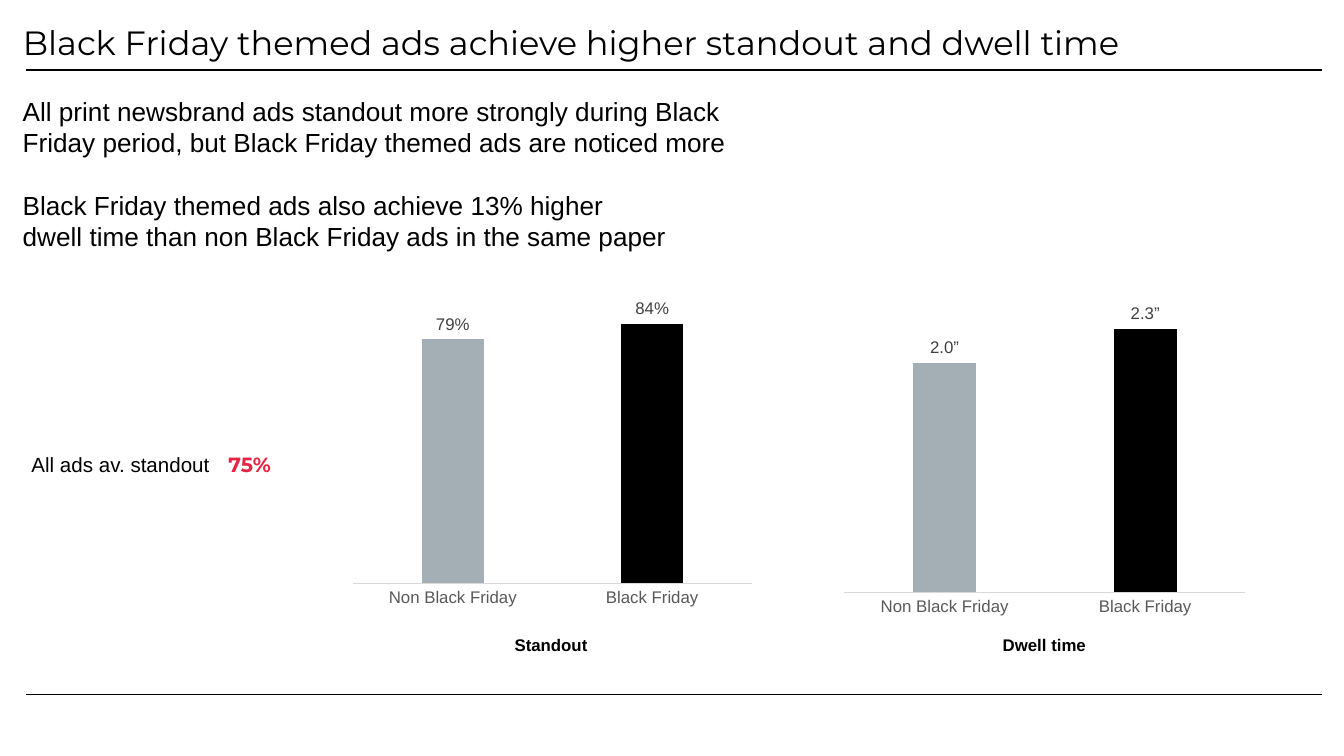
from pptx import Presentation
from pptx.chart.data import CategoryChartData
from pptx.dml.color import RGBColor
from pptx.enum.chart import XL_CHART_TYPE, XL_LABEL_POSITION, XL_TICK_MARK
from pptx.enum.shapes import MSO_CONNECTOR
from pptx.enum.text import MSO_ANCHOR, PP_ALIGN
from pptx.oxml import parse_xml
from pptx.oxml.ns import nsdecls
from pptx.util import Inches, Pt

HUES = {"black": "000000", "grey": "A3AEB5", "red": "E92343",
        "axis": "D9D9D9", "name": "595959", "label": "404040"}
TITLE = "Black Friday themed ads achieve higher standout and dwell time"
BODY = [
    "All print newsbrand ads standout more strongly during Black "
    "Friday period, but Black Friday themed ads are noticed more",
    "Black Friday themed ads also achieve 13% higher \v"
    "dwell time than non Black Friday ads in the same paper",
]
CATS = ["Non Black Friday", "Black Friday"]
CHARTS = [
    {"name": "Standout", "vals": [0.79, 0.84], "max": 1, "fmt": "0%", "tags": [],
     "box": (2.5, 1.94, 3.19, 2.61), "plot": (0.04, 0.04, 0.93, 0.88), "left": 3.37},
    {"name": "Dwell time", "vals": [2, 2.3], "max": 2.5, "fmt": "0.0",
     "tags": ["2.0”", "2.3”"],
     "box": (6.22, 2.23, 3.11, 2.42), "plot": (0.02, 0.02, 0.96, 0.88), "left": 7.04},
]
STATS = [
    ("All ads av. standout", 1.63, {"align": PP_ALIGN.RIGHT}),
    ("75%", 0.73, {"face": "Montserrat", "hue": "red", "bold": True}),
]
RULES = [0.52, 5.17]


def color(key):
    return RGBColor.from_string(HUES[key])


def style(font, size, hue="black", face="Arial", bold=False):
    font.size, font.name, font.bold = Pt(size), face, bold
    font.color.rgb = color(hue)


def write(frame, text, align=PP_ALIGN.LEFT, gap=0, line=None, **look):
    parts = [text] if isinstance(text, str) else text
    frame.word_wrap = True
    for i, part in enumerate(parts):
        para = frame.add_paragraph() if i else frame.paragraphs[0]
        para.text = part
        para.alignment = align
        para.space_before = Pt(gap if i else 0)
        if line:
            para.line_spacing = line
        for item in [para, *para.runs]:
            style(item.font, **look)


def inches(box):
    return [Inches(n) for n in box]


def add_text(slide, box, text, inset=None, **look):
    frame = slide.shapes.add_textbox(*inches(box)).text_frame
    if inset is not None:
        frame.margin_left = frame.margin_right = Inches(inset)
        frame.margin_top = frame.margin_bottom = Inches(inset)
    write(frame, text, **look)


def add_rule(slide, y):
    rule = slide.shapes.add_connector(
        MSO_CONNECTOR.STRAIGHT, *inches((0.19, y, 9.84, y)))
    rule.line.color.rgb = color("black")
    rule.line.width = Pt(0.75)
    rule._element.spPr.append(parse_xml(f"<a:effectLst {nsdecls('a')}/>"))


def add_bars(slide, item):
    data = CategoryChartData()
    data.categories = CATS
    data.add_series("Series 1", item["vals"])
    chart = slide.shapes.add_chart(
        XL_CHART_TYPE.COLUMN_CLUSTERED, *inches(item["box"]), data).chart
    chart.has_legend = chart.has_title = False
    style(chart.font, 10)

    cat, val = chart.category_axis, chart.value_axis
    cat.major_tick_mark = cat.minor_tick_mark = XL_TICK_MARK.NONE
    cat.format.line.color.rgb = color("axis")
    cat.format.line.width = Pt(0.75)
    style(cat.tick_labels.font, 9, "name")
    val.minimum_scale, val.maximum_scale = 0, item["max"]
    val.has_major_gridlines = val.visible = False

    plot = chart.plots[0]
    plot.gap_width, plot.overlap = 219, -27
    plot.vary_by_categories = False
    bars = plot.series[0]
    for i, hue in enumerate(("grey", "black")):
        fill = bars.points[i].format.fill
        fill.solid()
        fill.fore_color.rgb = color(hue)
    tags = bars.data_labels
    tags.show_value = True
    tags.position = XL_LABEL_POSITION.OUTSIDE_END
    tags.number_format, tags.number_format_is_linked = item["fmt"], False
    style(tags.font, 9, "label")
    for i, text in enumerate(item["tags"]):
        tag = bars.points[i].data_label
        write(tag.text_frame, text, align=PP_ALIGN.CENTER, size=9, hue="label")
        tag.position = XL_LABEL_POSITION.OUTSIDE_END

    area = chart._chartSpace.chart.plotArea
    for old in area.findall(area.tag.replace("plotArea", "layout")):
        area.remove(old)
    sizes = "".join(f'<c:{k} val="{v}"/>' for k, v in zip("xywh", item["plot"]))
    area.insert(0, parse_xml(
        f'<c:layout {nsdecls("c")}><c:manualLayout><c:layoutTarget val="inner"/>'
        f'<c:xMode val="edge"/><c:yMode val="edge"/>{sizes}'
        '</c:manualLayout></c:layout>'))


def add_stats(slide):
    wide = sum(width for _, width, _ in STATS)
    table = slide.shapes.add_table(
        1, len(STATS), *inches((0, 3.25, wide, 0.42))).table
    table.first_row = table.horz_banding = False
    for i, (text, width, look) in enumerate(STATS):
        table.columns[i].width = Inches(width)
        cell = table.cell(0, i)
        cell.fill.background()
        cell.vertical_anchor = MSO_ANCHOR.MIDDLE
        cell.margin_left = cell.margin_right = Inches(0.07)
        cell.margin_top = cell.margin_bottom = Inches(0.04)
        write(cell.text_frame, text, size=11, **look)


def main():
    deck = Presentation()
    deck.slide_width, deck.slide_height = Inches(10), Inches(10 * 9 / 16)
    slide = deck.slides.add_slide(deck.slide_layouts[5])
    for y in RULES:
        add_rule(slide, y)
    title = slide.shapes.title
    title.left, title.top, title.width, title.height = inches((0.07, 0.14, 9.76, 0.39))
    title.text_frame.vertical_anchor = MSO_ANCHOR.MIDDLE
    write(title.text_frame, TITLE, size=18, face="Montserrat", line=0.9)
    add_text(slide, (0.07, 0.66, 5.85, 1.28), BODY, size=14, gap=16.8)
    for item in CHARTS:
        add_bars(slide, item)
        add_text(slide, (item["left"], 4.72, 1.46, 0.15), item["name"],
                 inset=0, size=9, bold=True, align=PP_ALIGN.CENTER)
    add_stats(slide)
    deck.save("out.pptx")


if __name__ == "__main__":
    main()
